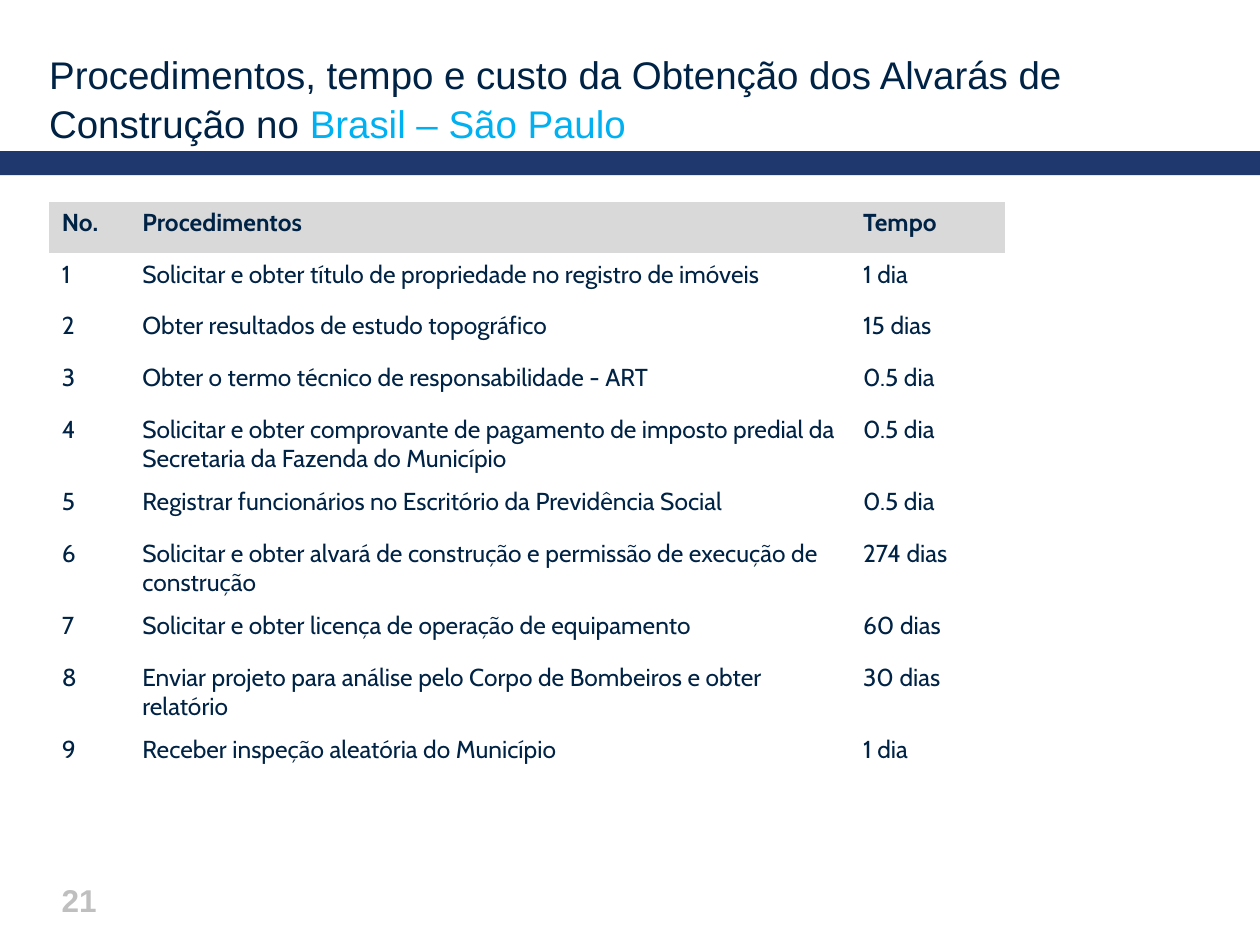
from pptx import Presentation
from pptx.dml.color import RGBColor as RGB
from pptx.enum.shapes import MSO_SHAPE as SHAPE
from pptx.enum.text import MSO_ANCHOR as ANCHOR, MSO_AUTO_SIZE as FIT, PP_ALIGN as ALIGN
from pptx.util import Inches, Pt

COLORS = {"navy": "002345", "sky": "00B0F0", "bar": "1F396F",
          "header": "D9D9D9", "number": "BFBFBF"}
NO_GRID_STYLE = "{2D5ABB26-0587-4C30-8999-92F81FD0307C}"

TITLE = [("Procedimentos, tempo e custo da Obtenção dos Alvarás de Construção no ", "navy"),
         ("Brasil – São Paulo", "sky")]
HEADINGS = ("No.", "Procedimentos", "Tempo")
PROCEDURES = [
    ("Solicitar e obter título de propriedade no registro de imóveis", "1 dia"),
    ("Obter resultados de estudo topográfico", "15 dias"),
    ("Obter o termo técnico de responsabilidade - ART", "0.5 dia"),
    ("Solicitar e obter comprovante de pagamento de imposto predial da "
     "Secretaria da Fazenda do Município", "0.5 dia"),
    ("Registrar funcionários no Escritório da Previdência Social", "0.5 dia"),
    ("Solicitar e obter alvará de construção e permissão de execução de construção",
     "274 dias"),
    ("Solicitar e obter licença de operação de equipamento", "60 dias"),
    ("Enviar projeto para análise pelo Corpo de Bombeiros e obter relatório", "30 dias"),
    ("Receber inspeção aleatória do Município", "1 dia"),
]
PAGE_NUMBER = "21"

LEFT = 0.39
COLUMN_WIDTHS = (0.64, 5.72, 1.23)
ROW_HEIGHT = 0.41

TITLE_FONT = {"name": "Arial", "size": Pt(22), "bold": False}
TABLE_FONT = {"name": "Cabin", "size": Pt(14)}
NUMBER_FONT = {"name": "Arial", "size": Pt(18), "bold": True}
TITLE_FRAME = {"margin_left": 0, "margin_top": 0, "margin_right": 0, "margin_bottom": 0,
               "vertical_anchor": ANCHOR.BOTTOM, "word_wrap": True, "auto_size": FIT.NONE}


def box(left, top, width, height):
    return [Inches(value) for value in (left, top, width, height)]


def apply(target, values):
    for name, value in values.items():
        setattr(target, name, value)


def add_run(paragraph, text, color, font):
    run = paragraph.add_run()
    run.text = text
    apply(run.font, font)
    run.font.color.rgb = RGB.from_string(COLORS[color])


def add_bar(slide):
    bar = slide.shapes.add_shape(SHAPE.RECTANGLE, *box(0, 1.2, 10, 0.19))
    bar.shadow.inherit = False
    bar.fill.solid()
    bar.fill.fore_color.rgb = RGB.from_string(COLORS["bar"])
    bar.line.fill.background()


def add_title(slide):
    title = slide.shapes.title
    apply(title, dict(zip(("left", "top", "width", "height"), box(LEFT, 0.33, 9.25, 0.83))))
    apply(title.text_frame, TITLE_FRAME)
    heading = title.text_frame.paragraphs[0]
    apply(heading, {"alignment": ALIGN.LEFT, "line_spacing": 1.06})
    for text, color in TITLE:
        add_run(heading, text, color, TITLE_FONT)


def add_procedures(slide):
    rows = [HEADINGS] + [(str(number), *procedure)
                         for number, procedure in enumerate(PROCEDURES, 1)]
    frame = slide.shapes.add_table(
        len(rows), len(HEADINGS),
        *box(LEFT, 1.6, sum(COLUMN_WIDTHS), ROW_HEIGHT * len(rows)))
    procedures = frame.table
    procedures.horz_banding = False
    procedures._tbl.tblPr.find("{*}tableStyleId").text = NO_GRID_STYLE
    for column, width in zip(procedures.columns, COLUMN_WIDTHS):
        column.width = Inches(width)
    for row_index, row in enumerate(rows):
        is_header = row_index == 0
        for column_index, text in enumerate(row):
            cell = procedures.cell(row_index, column_index)
            add_run(cell.text_frame.paragraphs[0], text, "navy",
                    {**TABLE_FONT, "bold": is_header})
            if is_header:
                cell.fill.solid()
                cell.fill.fore_color.rgb = RGB.from_string(COLORS["header"])
            else:
                cell.fill.background()


def add_page_number(slide):
    frame = slide.shapes.add_textbox(*box(LEFT, 6.94, 0.6, 0.39)).text_frame
    frame.word_wrap = True
    add_run(frame.paragraphs[0], PAGE_NUMBER, "number", NUMBER_FONT)


def main():
    """Build the slide of construction permit procedures."""
    deck = Presentation()
    deck.slide_width, deck.slide_height = Inches(10), Inches(7.5)
    slide = deck.slides.add_slide(deck.slide_layouts[5])
    for add_part in (add_bar, add_procedures, add_title, add_page_number):
        add_part(slide)
    deck.save("out.pptx")


if __name__ == "__main__":
    main()
